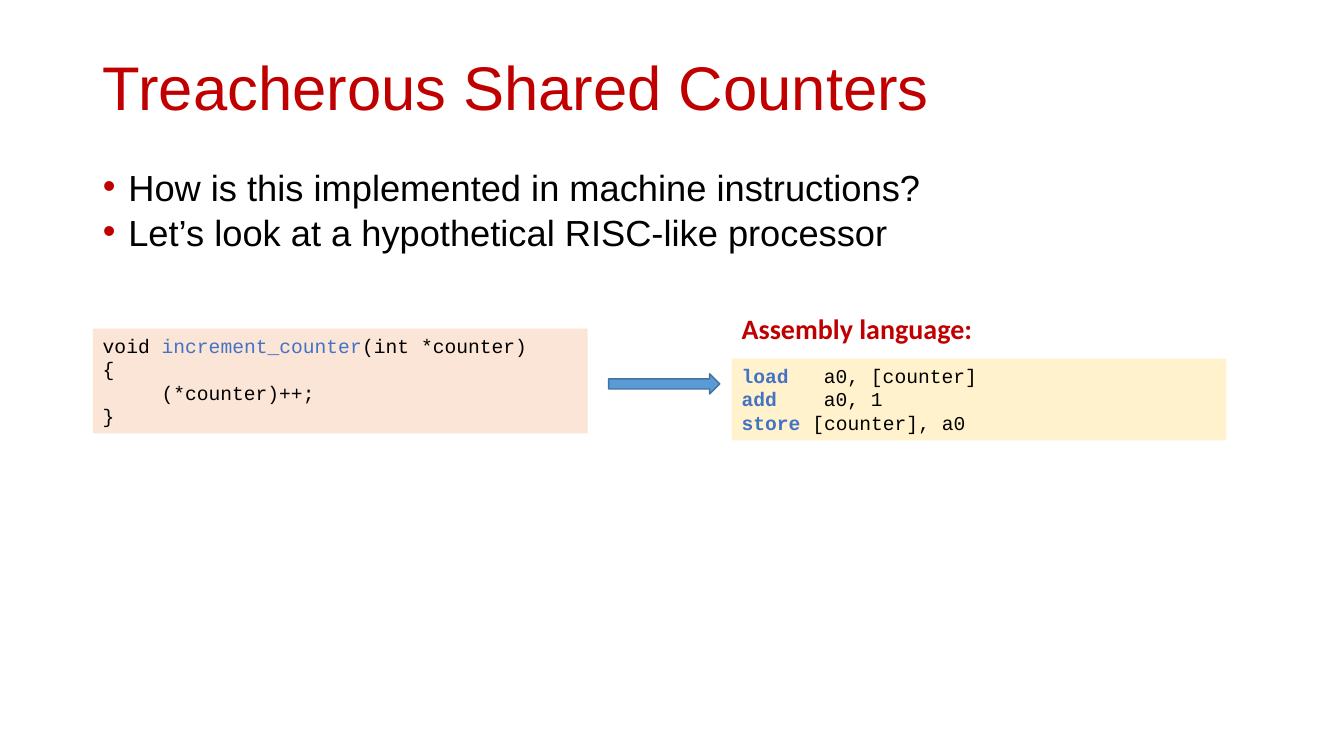
from dataclasses import dataclass

from lxml import etree
from pptx import Presentation, util as u
from pptx.dml.color import RGBColor
from pptx.enum import shapes, text
from pptx.oxml.ns import qn

# Content: code lines hold (words, style) runs
TITLE = "Treacherous Shared Counters"
QUESTIONS = [
    "How is this implemented in machine instructions?",
    "Let’s look at a hypothetical RISC-like processor",
]
C_CODE = [
    [("void ", "plain"), ("increment_counter", "name"), ("(int *counter)", "plain")],
    [("{", "plain")],
    [("(*counter)++;", "plain")],
    [("}", "plain")],
]
C_INDENTED = {2}
ASSEMBLY_HEADING = "Assembly language:"
ASSEMBLY = [
    [("load", "opcode"), ("\ta0, [counter]", "plain")],
    [("add", "opcode"), ("\ta0, 1", "plain")],
    [("store ", "opcode"), ("[counter], a0", "plain")],
]


@dataclass(frozen=True)
class Theme:
    red: str = "C00000"
    ink: str = "000000"
    blue: str = "4472C4"
    peach: str = "FBE5D6"
    cream: str = "FFF2CC"
    arrow: str = "5B9BD5"
    arrow_edge: str = "43739E"
    sans: str = "Arial"
    heading: str = "Calibri"
    mono: str = "Courier New"
    title_size: float = 44
    body_size: float = 25.9
    heading_size: float = 20
    code_size: float = 14


THEME = Theme()
RUN_STYLES = {  # colour, bold
    "plain": (THEME.ink, False),
    "name": (THEME.blue, False),
    "opcode": (THEME.blue, True),
}

# Layout in centimetres
LEFT, RIGHT = 2.34, 18.44
CONTENT_WIDTH, CODE_WIDTH = 29.21, 12.47
CHAR_WIDTH = u.Pt(THEME.code_size * 0.6)  # one monospaced character


def rgb(value):
    return RGBColor.from_string(value)


def place(part, left, top, width, height):
    part.left, part.top = u.Cm(left), u.Cm(top)
    part.width, part.height = u.Cm(width), u.Cm(height)


def set_font(font, name, size, color, bold=False):
    font.name, font.size, font.bold = name, u.Pt(size), bold
    font.color.rgb = rgb(color)


def add_bullet(paragraph, color, indent):
    props = paragraph._p.get_or_add_pPr()
    props.set("marL", str(indent))
    props.set("indent", str(-indent))
    bullet_color = etree.SubElement(props, qn("a:buClr"))
    etree.SubElement(bullet_color, qn("a:srgbClr"), val=color)
    etree.SubElement(props, qn("a:buFont"), typeface=THEME.sans)
    etree.SubElement(props, qn("a:buChar"), char="•")


def add_text_area(slide, left, top, width, height):
    area = slide.shapes.add_textbox(*map(u.Cm, (left, top, width, height)))
    area.text_frame.word_wrap = True
    area.text_frame.auto_size = text.MSO_AUTO_SIZE.SHAPE_TO_FIT_TEXT
    return area


def add_code(slide, lines, fill, left, top, height, indented=(), tab_chars=0):
    panel = add_text_area(slide, left, top, CODE_WIDTH, height)
    panel.fill.solid()
    panel.fill.fore_color.rgb = rgb(fill)
    frame = panel.text_frame
    for number, line in enumerate(lines):
        paragraph = frame.paragraphs[0] if number == 0 else frame.add_paragraph()
        props = paragraph._p.get_or_add_pPr()
        if number in indented:
            props.set("marL", str(5 * CHAR_WIDTH))
        if tab_chars:
            stops = etree.SubElement(props, qn("a:tabLst"))
            etree.SubElement(stops, qn("a:tab"), pos=str(tab_chars * CHAR_WIDTH), algn="l")
        for words, style in line:
            run = paragraph.add_run()
            run.text = words
            set_font(run.font, THEME.mono, THEME.code_size, *RUN_STYLES[style])


def main():
    deck = Presentation()
    deck.slide_width, deck.slide_height = u.Cm(33.87), u.Cm(19.05)
    slide = deck.slides.add_slide(deck.slide_layouts[1])

    # Title
    title = slide.shapes.title
    place(title, LEFT, 0.43, CONTENT_WIDTH, 3.68)
    title.text_frame.text = TITLE
    title.text_frame.vertical_anchor = text.MSO_ANCHOR.MIDDLE
    title.text_frame.auto_size = text.MSO_AUTO_SIZE.NONE
    heading = title.text_frame.paragraphs[0]
    heading.alignment = text.PP_ALIGN.LEFT
    heading.line_spacing = 0.9
    set_font(heading.font, THEME.sans, THEME.title_size, THEME.red)

    # Bulleted questions
    body = slide.placeholders[1]
    place(body, LEFT, 4.34, CONTENT_WIDTH, 2.39)
    body.text_frame.text = "\n".join(QUESTIONS)
    body.text_frame.auto_size = text.MSO_AUTO_SIZE.NONE
    for question in body.text_frame.paragraphs:
        question.line_spacing = 0.7
        question.space_before = u.Pt(10)
        set_font(question.font, THEME.sans, THEME.body_size, THEME.ink)
        add_bullet(question, THEME.red, u.Cm(0.64))

    # Function and its machine instructions
    add_code(slide, C_CODE, THEME.peach, LEFT, 8.28, 2.64, indented=C_INDENTED)
    add_code(slide, ASSEMBLY, THEME.cream, RIGHT, 9.04, 2.06, tab_chars=7)

    # Arrow from function to instructions
    arrow = slide.shapes.add_shape(
        shapes.MSO_SHAPE.RIGHT_ARROW, *map(u.Cm, (15.34, 9.42, 2.8, 0.51)))
    arrow.shadow.inherit = False
    arrow.fill.solid()
    arrow.fill.fore_color.rgb = rgb(THEME.arrow)
    arrow.line.color.rgb = rgb(THEME.arrow_edge)
    arrow.line.width = u.Pt(1)

    # Assembly heading
    label = add_text_area(slide, RIGHT, 7.72, 12.37, 1.12)
    label.text_frame.text = ASSEMBLY_HEADING
    set_font(label.text_frame.paragraphs[0].font,
             THEME.heading, THEME.heading_size, THEME.red, bold=True)

    deck.save("out.pptx")


if __name__ == "__main__":
    main()
